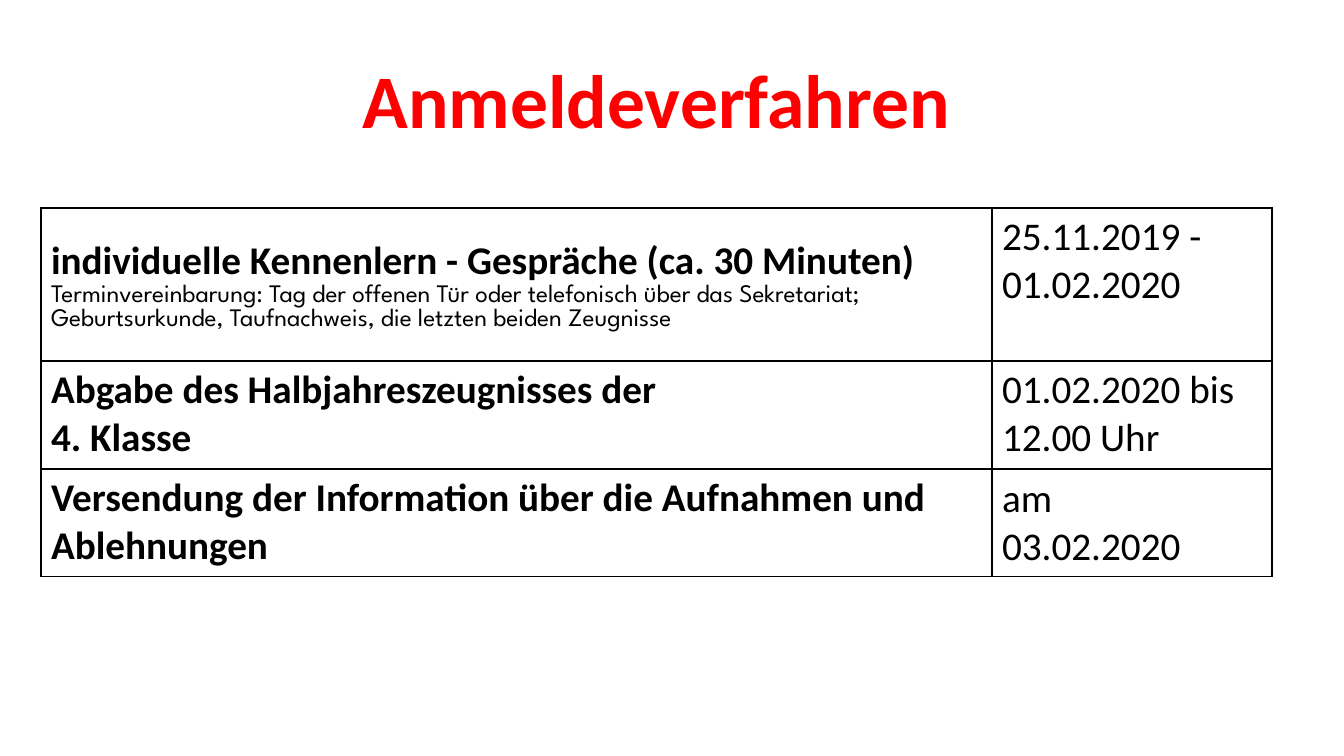
from lxml.etree import SubElement
from pptx import Presentation
from pptx.dml.color import RGBColor
from pptx.enum.text import MSO_ANCHOR as Anchor, PP_ALIGN as Align
from pptx.oxml.ns import qn
from pptx.util import Pt

PX = 914400 / 100.8
RED = RGBColor(0xFF, 0x00, 0x00)
BLACK = RGBColor(0x00, 0x00, 0x00)
WHITE = RGBColor(0xFF, 0xFF, 0xFF)

TITLE = "Anmeldeverfahren"
STEPS = [
    (["individuelle Kennenlern - Gespräche (ca. 30 Minuten)"],
     ["Terminvereinbarung: Tag der offenen Tür oder telefonisch über das Sekretariat;",
      "Geburtsurkunde, Taufnachweis, die letzten beiden Zeugnisse"],
     ["25.11.2019 - 01.02.2020"]),
    (["Abgabe des Halbjahreszeugnisses der", "4. Klasse"],
     [],
     ["01.02.2020 bis", "12.00 Uhr"]),
    (["Versendung der Information über die Aufnahmen und Ablehnungen"],
     [],
     ["am", "03.02.2020"]),
]


def px(length):
    return round(length * PX)


def style_cell(cell, sides):
    properties = cell._tc.get_or_add_tcPr()
    for side in ("L", "R", "T", "B"):
        line = SubElement(properties, qn(f"a:ln{side}"), w=str(Pt(1)))
        fill = SubElement(line, qn("a:solidFill"))
        SubElement(fill, qn("a:srgbClr"), val=str(sides[side]))
    cell.fill.solid()
    cell.fill.fore_color.rgb = WHITE


def write_cell(cell, lines, anchor=Anchor.TOP):
    cell.vertical_anchor = anchor
    frame = cell.text_frame
    for index, (text, name, size, bold, color) in enumerate(lines):
        paragraph = frame.add_paragraph() if index else frame.paragraphs[0]
        paragraph.text = text
        font = paragraph.font
        font.name, font.size, font.bold = name, Pt(size), bold
        font.color.rgb = color


def add_schedule(slide, left, top, widths, heights):
    table = slide.shapes.add_table(
        len(heights), len(widths), px(left), px(top),
        px(sum(widths)), px(sum(heights))).table
    table.first_row = table.horz_banding = False
    for column, width in zip(table.columns, widths):
        column.width = px(width)
    for row, height in zip(table.rows, heights):
        row.height = px(height)

    title_cell = table.cell(0, 0)
    title_cell.merge(table.cell(0, len(widths) - 1))
    for cell in table.rows[0].cells:
        style_cell(cell, dict(L=WHITE, R=WHITE, T=WHITE, B=BLACK))
    write_cell(title_cell, [(TITLE, "Calibri", 54, True, RED)])
    title_cell.text_frame.paragraphs[0].alignment = Align.CENTER

    for row, (headings, details, dates) in enumerate(STEPS, start=1):
        step_cell, date_cell = table.cell(row, 0), table.cell(row, 1)
        for cell in (step_cell, date_cell):
            style_cell(cell, dict.fromkeys("LRTB", BLACK))
        lines = [(text, "Calibri", 28, True, BLACK) for text in headings]
        lines += [(text, "League Spartan", 18, False, BLACK) for text in details]
        write_cell(step_cell, lines, Anchor.MIDDLE if details else Anchor.TOP)
        write_cell(date_cell,
                   [(text, "Calibri", 28, False, BLACK) for text in dates],
                   Anchor.MIDDLE if row == len(STEPS) else Anchor.TOP)


def main():
    presentation = Presentation()
    presentation.slide_width, presentation.slide_height = px(1344), px(756)
    slide = presentation.slides.add_slide(presentation.slide_layouts[6])
    add_schedule(slide, 41, 52, widths=[951, 280], heights=[156, 153, 108, 108])
    presentation.save("out.pptx")


if __name__ == "__main__":
    main()
